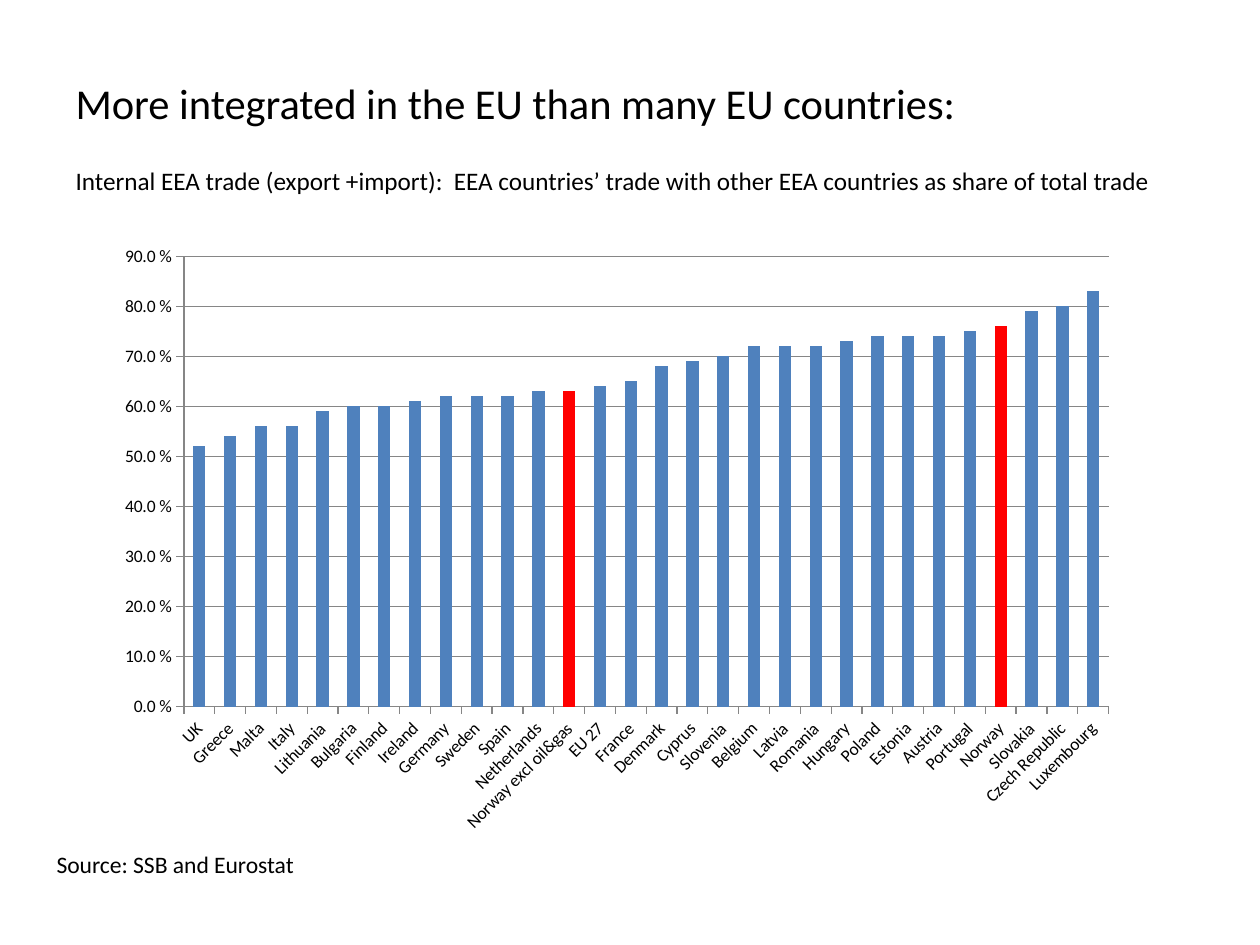
from pptx import Presentation
from pptx.chart.data import CategoryChartData
from pptx.dml.color import RGBColor
from pptx.enum.chart import XL_CHART_TYPE, XL_TICK_MARK
from pptx.enum.text import MSO_ANCHOR, MSO_AUTO_SIZE, PP_ALIGN
from pptx.util import Pt

SHARES = {
    "UK": 0.52, "Greece": 0.54, "Malta": 0.56, "Italy": 0.56,
    "Lithuania": 0.59, "Bulgaria": 0.60, "Finland": 0.60, "Ireland": 0.61,
    "Germany": 0.62, "Sweden": 0.62, "Spain": 0.62, "Netherlands": 0.63,
    "Norway excl oil&gas": 0.63, "EU 27": 0.64, "France": 0.65,
    "Denmark": 0.68, "Cyprus": 0.69, "Slovenia": 0.70, "Belgium": 0.72,
    "Latvia": 0.72, "Romania": 0.72, "Hungary": 0.73, "Poland": 0.74,
    "Estonia": 0.74, "Austria": 0.74, "Portugal": 0.75, "Norway": 0.76,
    "Slovakia": 0.79, "Czech Republic": 0.80, "Luxembourg": 0.83,
}


def color(code):
    return RGBColor.from_string(code)


def apply(item, values):
    for name, value in values.items():
        setattr(item, name, value)


class Deck:
    font = "Calibri"
    ink, bar, mark, grid = "000000", "4F81BD", "FF0000", "868686"

    def __init__(self, wide, high):
        self.prs = Presentation()
        apply(self.prs, {"slide_width": Pt(wide), "slide_height": Pt(high)})
        self.slide = self.prs.slides.add_slide(self.prs.slide_layouts[5])

    def style(self, font, size):
        apply(font, {"name": self.font, "size": Pt(size), "bold": False})
        font.color.rgb = color(self.ink)

    def line(self, para, text, size, gap=0):
        apply(para, {"alignment": PP_ALIGN.LEFT, "space_before": Pt(gap)})
        run = para.add_run()
        run.text = text
        self.style(run.font, size)

    def title(self, box, head, sub):
        shape = self.slide.shapes.title
        apply(shape, dict(zip(("left", "top", "width", "height"), map(Pt, box))))
        frame = shape.text_frame
        apply(frame, {"word_wrap": True, "auto_size": MSO_AUTO_SIZE.NONE,
                      "vertical_anchor": MSO_ANCHOR.BOTTOM, "margin_bottom": 0})
        self.line(frame.paragraphs[0], head, 24.3)
        self.line(frame.add_paragraph(), sub, 14.4, 21)

    def note(self, box, text):
        frame = self.slide.shapes.add_textbox(*map(Pt, box)).text_frame
        apply(frame, {"word_wrap": True,
                      "auto_size": MSO_AUTO_SIZE.SHAPE_TO_FIT_TEXT})
        self.line(frame.paragraphs[0], text, 13.5)

    def stroke(self, line):
        line.width = Pt(0.75)
        line.color.rgb = color(self.grid)

    def chart(self, box, shares, marked):
        data = CategoryChartData(number_format="0.0\\ %")
        data.categories = list(shares)
        data.add_series("Series 1", list(shares.values()))
        chart = self.slide.shapes.add_chart(
            XL_CHART_TYPE.COLUMN_CLUSTERED, *map(Pt, box), data).chart
        apply(chart, {"has_legend": False, "has_title": False})
        self.style(chart.font, 10)

        # Bars
        plot = chart.plots[0]
        apply(plot, {"gap_width": 150, "vary_by_categories": False})
        bars = plot.series[0]
        fills = [bars.format.fill]
        fills += [bars.points[i].format.fill
                  for i, name in enumerate(shares) if name in marked]
        for i, fill in enumerate(fills):
            fill.solid()
            fill.fore_color.rgb = color(self.mark if i else self.bar)

        # Axes
        cats, vals = chart.category_axis, chart.value_axis
        for axis in (cats, vals):
            axis.major_tick_mark = XL_TICK_MARK.OUTSIDE
            self.stroke(axis.format.line)
            self.style(axis.tick_labels.font, 10)
        cats._element.txPr.bodyPr.set("rot", "-2700000")
        apply(vals, {"minimum_scale": 0, "maximum_scale": 0.9,
                     "major_unit": 0.1, "has_major_gridlines": True})
        apply(vals.tick_labels, {"number_format": "0.0\\ %",
                                 "number_format_is_linked": False})
        self.stroke(vals.major_gridlines.format.line)


def main():
    deck = Deck(720, 540)
    # Heading and subtitle
    deck.title((36, 21.6, 648, 90),
               "More integrated in the EU than many EU countries:",
               "Internal EEA trade (export +import):  EEA countries’ trade "
               "with other EEA countries as share of total trade")
    # Trade shares
    deck.chart((59.8, 133.9, 585.4, 348.5), SHARES,
               ("Norway excl oil&gas", "Norway"))
    # Source line
    deck.note((25.2, 482.4, 154, 23.8), "Source: SSB and Eurostat")
    deck.prs.save("out.pptx")


if __name__ == "__main__":
    main()
